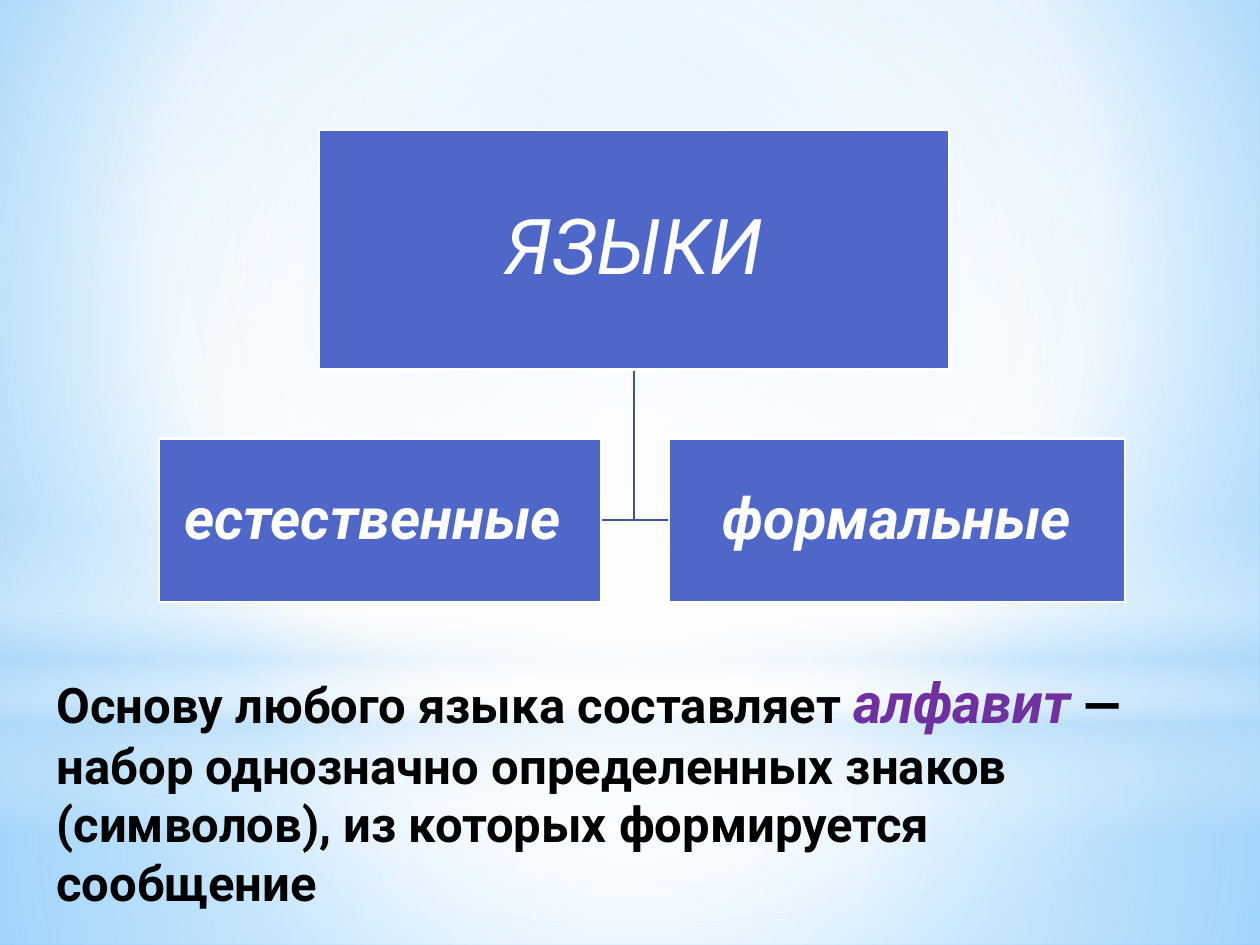
from dataclasses import dataclass
from typing import NamedTuple, Optional

from lxml.etree import SubElement
from pptx import Presentation
from pptx.dml.color import RGBColor
from pptx.enum.shapes import MSO_SHAPE
from pptx.enum.text import MSO_ANCHOR, PP_ALIGN
from pptx.oxml.ns import qn
from pptx.util import Cm, Pt


@dataclass(frozen=True)
class Theme:
    font: str = "Roboto"
    node: str = "4E67C8"
    branch: str = "3E52A0"
    white: str = "FFFFFF"
    haze: str = "B4DCFA"
    sky: str = "9ED5FF"
    deep_sky: str = "5BB9FF"
    ink: str = "000000"
    accent: str = "7030A0"
    root_size: int = 44
    child_size: int = 33
    term_size: int = 32
    body_size: int = 28
    line_width: float = 1.25


THEME = Theme()


class Box(NamedTuple):
    """Place and size in centimetres."""
    left: float
    top: float
    width: float
    height: float

    @property
    def right(self) -> float:
        return self.left + self.width

    @property
    def bottom(self) -> float:
        return self.top + self.height

    @property
    def center_x(self) -> float:
        return self.left + self.width / 2

    @property
    def middle_y(self) -> float:
        return self.top + self.height / 2

    def lengths(self) -> list:
        return [Cm(value) for value in self]


class Stop(NamedTuple):
    position: int
    color: str
    opacity: int = 100


class Gradient(NamedTuple):
    """Circular around a focus (left, top, right, bottom insets), or linear if focus is None."""
    stops: tuple
    focus: Optional[tuple] = (50, 50, 50, 50)
    angle: int = 90


class Glow(NamedTuple):
    outline: MSO_SHAPE
    box: Box
    gradient: Gradient


class Node(NamedTuple):
    text: str
    box: Box
    size: int
    bold: bool
    inset: float


class Run(NamedTuple):
    text: str
    size: int
    color: str
    bold: bool = True
    italic: bool = False


WIDTH, HEIGHT, HORIZON = 25.4, 19.05, 14.17

SKY = Gradient((Stop(0, THEME.sky), Stop(60, THEME.white), Stop(100, THEME.deep_sky)),
               focus=(20, 10, 20, 60))
GLOWS = (
    Glow(MSO_SHAPE.RECTANGLE, Box(0, HORIZON, WIDTH, HEIGHT - HORIZON), Gradient((
        Stop(0, THEME.white, 91), Stop(37, THEME.white, 76), Stop(100, THEME.haze, 79)))),
    Glow(MSO_SHAPE.RECTANGLE, Box(0, 0, WIDTH, HORIZON), Gradient((
        Stop(0, THEME.white, 89), Stop(48, THEME.white, 62), Stop(100, THEME.haze, 79)))),
    Glow(MSO_SHAPE.RECTANGLE, Box(0, 10.46, WIDTH, 6.35), Gradient((
        Stop(0, THEME.white, 0), Stop(29, THEME.white, 30), Stop(45, THEME.haze, 40),
        Stop(55, THEME.white, 26), Stop(65, THEME.haze, 60), Stop(100, THEME.white, 0)),
        focus=None)),
    Glow(MSO_SHAPE.OVAL, Box(0, 4.45, WIDTH, HORIZON), Gradient((
        Stop(0, THEME.white), Stop(56, THEME.white, 0)))),
)

LANGUAGES = Node("ЯЗЫКИ", Box(6.43, 2.62, 12.7, 4.83), THEME.root_size, False, 0.08)
NATURAL = Node("естественные ", Box(3.2, 8.84, 8.92, 3.3), THEME.child_size, True, 0.05)
FORMAL = Node("формальные", Box(13.49, 8.84, 9.19, 3.3), THEME.child_size, True, 0.05)

DEFINITION_BOX = Box(0.89, 13.34, 23.39, 5.21)
DEFINITION = (
    Run("Основу любого языка составляет ", THEME.body_size, THEME.ink),
    Run("алфавит", THEME.term_size, THEME.accent, italic=True),
    Run(" — набор однозначно определенных знаков (символов), "
        "из которых формируется сообщение", THEME.body_size, THEME.ink),
)


def rgb(color: str) -> RGBColor:
    return RGBColor.from_string(color)


def apply_gradient(fill, owner, gradient: Gradient) -> None:
    """Give the fill held inside the owner element its stops and direction."""
    fill.gradient()
    element = next(owner.iter(qn("a:gradFill")))
    for child in list(element):
        element.remove(child)
    stop_list = SubElement(element, qn("a:gsLst"))
    for stop in gradient.stops:
        entry = SubElement(stop_list, qn("a:gs"), pos=str(stop.position * 1000))
        color = SubElement(entry, qn("a:srgbClr"), val=stop.color)
        if stop.opacity < 100:
            SubElement(color, qn("a:alpha"), val=str(stop.opacity * 1000))
    if gradient.focus is None:
        SubElement(element, qn("a:lin"), ang=str(gradient.angle * 60000), scaled="0")
    else:
        path = SubElement(element, qn("a:path"), path="circle")
        insets = {side: str(inset * 1000) for side, inset in zip("ltrb", gradient.focus)}
        SubElement(path, qn("a:fillToRect"), **insets)


def write_text(frame, runs, *, align=PP_ALIGN.LEFT, anchor=MSO_ANCHOR.TOP,
               line_spacing: float = 1.0, inset: Optional[float] = None) -> None:
    frame.word_wrap = True
    frame.vertical_anchor = anchor
    if inset is not None:
        frame.margin_left = frame.margin_right = Cm(inset)
        frame.margin_top = frame.margin_bottom = Cm(inset)
    paragraph = frame.paragraphs[0]
    paragraph.alignment = align
    paragraph.line_spacing = line_spacing
    for part in runs:
        run = paragraph.add_run()
        run.text = part.text
        run.font.name = THEME.font
        run.font.size = Pt(part.size)
        run.font.bold = part.bold
        run.font.italic = part.italic
        run.font.color.rgb = rgb(part.color)


def set_line(shape, color: str) -> None:
    shape.line.color.rgb = rgb(color)
    shape.line.width = Pt(THEME.line_width)


def draw_glow(slide, glow: Glow) -> None:
    shape = slide.shapes.add_shape(glow.outline, *glow.box.lengths())
    shape.shadow.inherit = False
    shape.line.fill.background()
    apply_gradient(shape.fill, shape.element, glow.gradient)


def draw_branch(slide, parent: Box, child: Box) -> None:
    """Draw an elbow from under the parent to the facing side of the child."""
    side = child.left if child.left > parent.center_x else child.right
    builder = slide.shapes.build_freeform(Cm(parent.center_x), Cm(parent.bottom))
    builder.add_line_segments([(Cm(parent.center_x), Cm(child.middle_y)),
                               (Cm(side), Cm(child.middle_y))], close=False)
    branch = builder.convert_to_shape()
    branch.shadow.inherit = False
    branch.fill.background()
    set_line(branch, THEME.branch)


def draw_node(slide, node: Node) -> None:
    shape = slide.shapes.add_shape(MSO_SHAPE.RECTANGLE, *node.box.lengths())
    shape.shadow.inherit = False
    shape.fill.solid()
    shape.fill.fore_color.rgb = rgb(THEME.node)
    set_line(shape, THEME.white)
    label = Run(node.text, node.size, THEME.white, node.bold, italic=True)
    write_text(shape.text_frame, [label], align=PP_ALIGN.CENTER,
               anchor=MSO_ANCHOR.MIDDLE, line_spacing=0.9, inset=node.inset)


def main() -> None:
    deck = Presentation()
    deck.slide_width, deck.slide_height = Cm(WIDTH), Cm(HEIGHT)
    slide = deck.slides.add_slide(deck.slide_layouts[6])
    apply_gradient(slide.background.fill, slide.element, SKY)
    for glow in GLOWS:
        draw_glow(slide, glow)
    for child in (FORMAL, NATURAL):
        draw_branch(slide, LANGUAGES.box, child.box)
    for node in (LANGUAGES, NATURAL, FORMAL):
        draw_node(slide, node)
    definition = slide.shapes.add_textbox(*DEFINITION_BOX.lengths())
    write_text(definition.text_frame, DEFINITION)
    deck.save("out.pptx")


if __name__ == "__main__":
    main()
